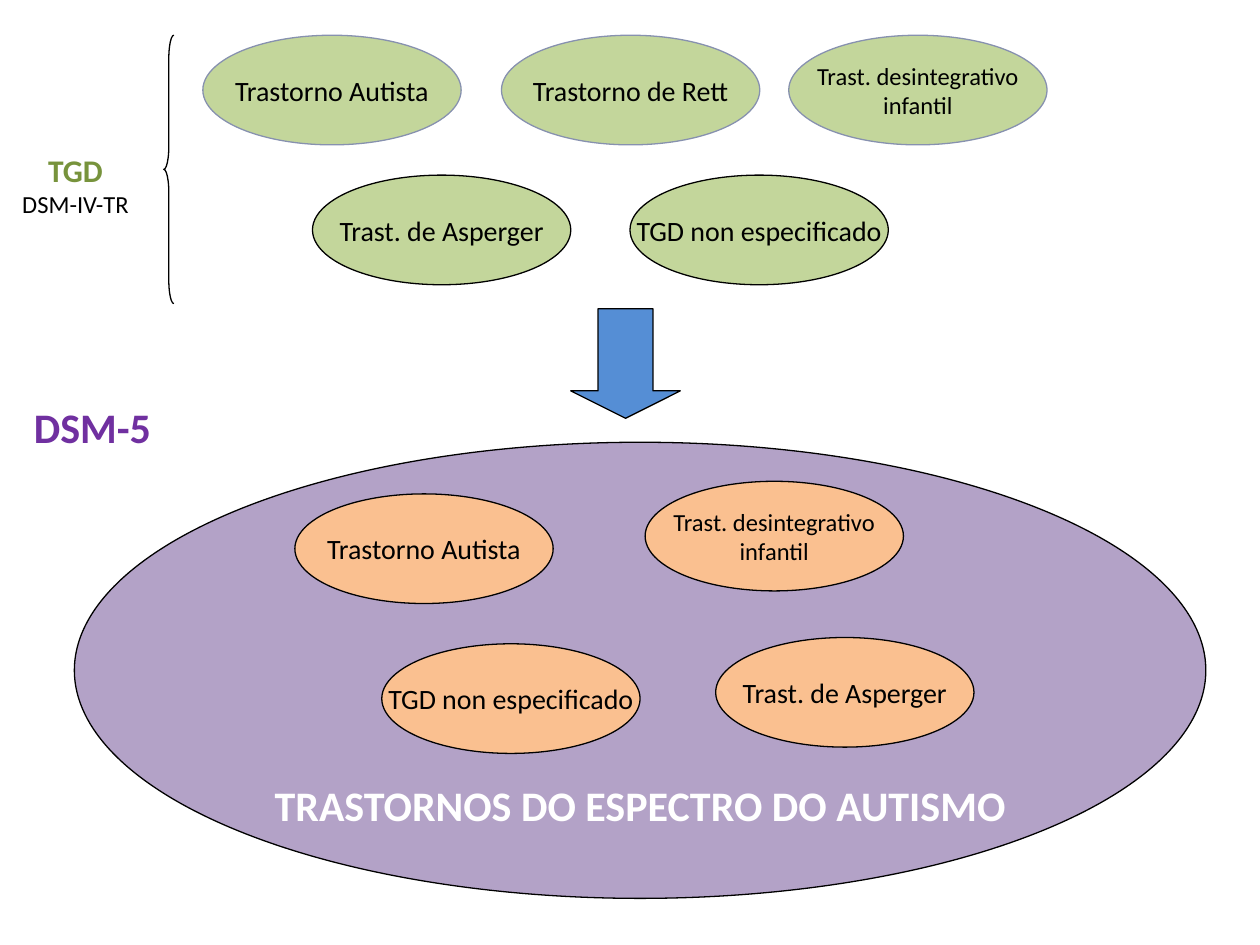
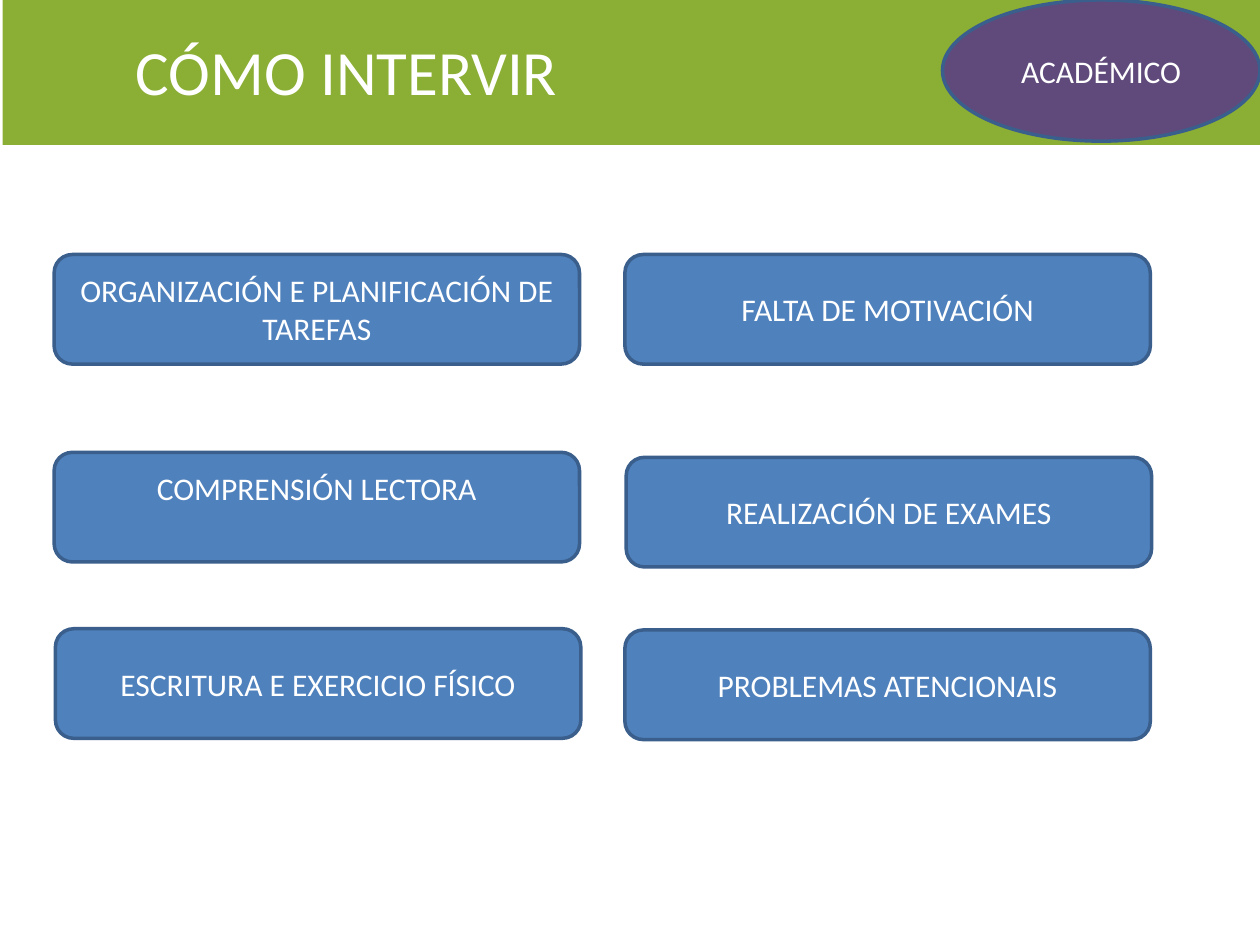
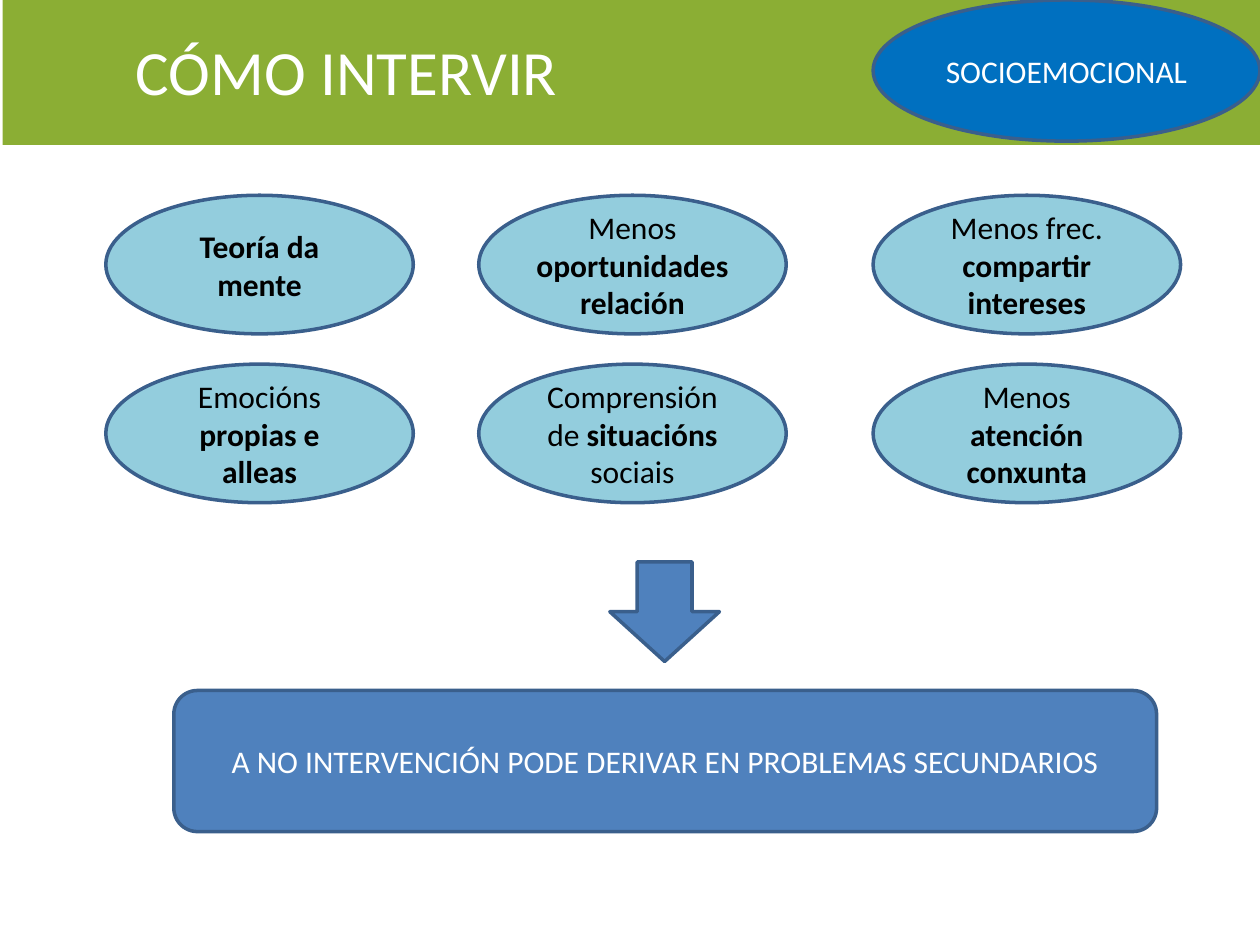
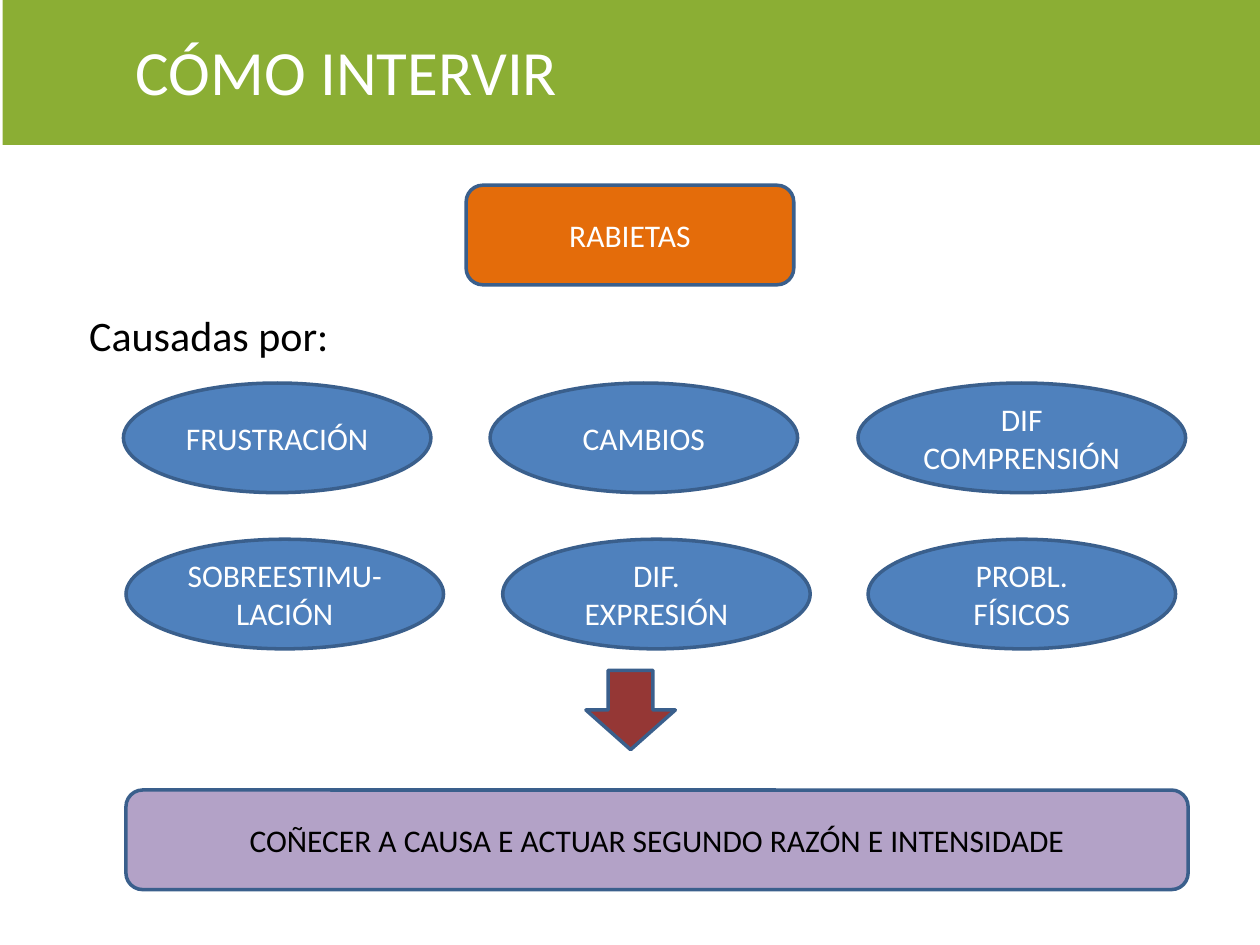
"""Builds four slides on autism disorders and how to intervene."""
from dataclasses import dataclass

from pptx import Presentation
from pptx import util as u
from pptx.dml import color as dml
from pptx.enum import shapes, text

CELL = u.Inches(0.1)
COLUMNS, ROWS = 100, 75
KIND = shapes.MSO_SHAPE
ALIGN = text.PP_ALIGN
ANCHOR = text.MSO_ANCHOR


@dataclass(frozen=True)
class Theme:
    """Colours, type sizes and line widths shared by the slides."""
    font: str = "Calibri"
    black: str = "000000"
    white: str = "FFFFFF"
    band: str = "8BAE34"
    blue: str = "4F81BD"
    outline: str = "3A5F8C"
    bright_blue: str = "0070C0"
    arrow_blue: str = "558ED5"
    pale_blue: str = "93CDDD"
    pale_green: str = "C3D69B"
    green: str = "77933C"
    grey_blue: str = "8791AF"
    peach: str = "FAC090"
    orange: str = "E46C0A"
    lilac: str = "B3A2C7"
    purple: str = "604A7B"
    violet: str = "7030A0"
    red: str = "953735"
    title: int = 36
    heading: int = 24
    body: int = 18
    label: int = 16
    small: int = 14
    thin: float = 0.75
    thick: float = 2


THEME = Theme()


@dataclass(frozen=True)
class Box:
    """A region in grid columns and rows."""
    left: float
    top: float
    width: float
    height: float

    def inner(self, left, top, width, height):
        """Return a box placed relative to this one."""
        return Box(self.left + left, self.top + top, width, height)

    def lengths(self):
        """Return the region in slide units."""
        return [round(cells * CELL) for cells in (self.left, self.top, self.width, self.height)]


PAGE = Box(0, 0, COLUMNS, ROWS)


def rgb(value):
    """Turn a hex string into a colour."""
    return dml.RGBColor.from_string(value)


def write(shape, words, size=THEME.body, color=THEME.white, bold=False,
          align=ALIGN.CENTER, wrap=True):
    """Add a paragraph per line of words, with *starred* pieces in bold."""
    frame = shape.text_frame
    frame.word_wrap = wrap
    for line in words.split("\n"):
        paragraph = frame.paragraphs[0] if not frame.text else frame.add_paragraph()
        paragraph.alignment = align
        for index, piece in enumerate(line.split("*")):
            if piece:
                run = paragraph.add_run()
                run.text = piece
                run.font.name = THEME.font
                run.font.size = u.Pt(size)
                run.font.color.rgb = rgb(color)
                run.font.bold = bold or index % 2 == 1


def draw(slide, kind, box, fill=THEME.blue, line=THEME.outline, weight=THEME.thick,
         words="", adjust=(), **style):
    """Add a preset shape with its fill, outline and words."""
    shape = slide.shapes.add_shape(kind, *box.lengths())
    shape.shadow.inherit = False
    if fill:
        shape.fill.solid()
        shape.fill.fore_color.rgb = rgb(fill)
    else:
        shape.fill.background()
    if line:
        shape.line.color.rgb = rgb(line)
        shape.line.width = u.Pt(weight)
    else:
        shape.line.fill.background()
    for index, value in enumerate(adjust):
        shape.adjustments[index] = value
    shape.text_frame.vertical_anchor = ANCHOR.MIDDLE
    if words:
        write(shape, words, **style)
    return shape


def label(slide, box, words, grow=True, **style):
    """Add a plain text box."""
    shape = slide.shapes.add_textbox(*box.lengths())
    write(shape, words, **style)
    if grow:
        shape.text_frame.auto_size = text.MSO_AUTO_SIZE.SHAPE_TO_FIT_TEXT
    return shape


def header(slide, box, badge="", badge_width=0, badge_fill=None):
    """Place the green band, its title and an optional badge at the right."""
    draw(slide, KIND.RECTANGLE, box, fill=THEME.band, line=None)
    label(slide, box.inner(9.6, 2.1, 82.7, 7.1), "CÓMO INTERVIR", size=THEME.title, align=ALIGN.LEFT)
    if badge:
        draw(slide, KIND.OVAL, box.inner(box.width - badge_width, 0, badge_width, 11.2),
             fill=badge_fill, words=badge)


def disorders(slide, box, items, fill):
    """Place the small ovals that each name a disorder."""
    for left, top, words, line in items:
        size = THEME.small if "\n" in words else THEME.label
        draw(slide, KIND.OVAL, box.inner(left, top, 20.5, 8.7), fill=fill, line=line,
             weight=THEME.thin, words=words, size=size, color=THEME.black, wrap=False)


def old_manual(slide, box):
    """Place the five former disorders with their brace and label."""
    disorders(slide, box, [
        (16.1, 0, "Trastorno Autista", THEME.grey_blue),
        (39.8, 0, "Trastorno de Rett", THEME.grey_blue),
        (62.6, 0, "Trast. desintegrativo\ninfantil", THEME.grey_blue),
        (24.8, 11.1, "Trast. de Asperger", THEME.black),
        (50, 11.1, "TGD non especificado", THEME.black),
    ], THEME.pale_green)
    draw(slide, KIND.LEFT_BRACE, box.inner(13, 0, 0.8, box.height), fill=None,
         line=THEME.black, weight=THEME.thin, adjust=(2.27, 0.5))
    name = label(slide, box.inner(0.7, 8.7, 10.6, 6.4), "TGD", color=THEME.green, bold=True, wrap=False)
    write(name, "DSM-IV-TR", size=THEME.small, color=THEME.black, wrap=False)


def new_manual(slide, box):
    """Place the spectrum oval with the disorders it takes in."""
    spectrum = draw(slide, KIND.OVAL, box, fill=THEME.lilac, line=THEME.black, weight=THEME.thin,
                    words="TRASTORNOS DO ESPECTRO DO AUTISMO", size=THEME.heading,
                    bold=True, wrap=False)
    spectrum.text_frame.vertical_anchor = ANCHOR.BOTTOM
    spectrum.text_frame.margin_bottom = u.Inches(0.01)
    disorders(slide, box, [
        (17.5, 4.1, "Trastorno Autista", THEME.black),
        (45.3, 3.1, "Trast. desintegrativo\ninfantil", THEME.black),
        (50.9, 15.5, "Trast. de Asperger", THEME.black),
        (24.4, 16, "TGD non especificado", THEME.black),
    ], THEME.peach)
    label(slide, box.inner(-4.2, -3.7, 11.4, 5), "DSM-5", size=THEME.heading,
          color=THEME.violet, bold=True, align=ALIGN.LEFT, wrap=False)


def cards(slide, box, items):
    """Stack rounded cards of one size at the given rows of a column."""
    return [draw(slide, KIND.ROUNDED_RECTANGLE, box.inner(left, top, box.width, 8.7), words=words)
            for left, top, words in items]


def oval_row(slide, box, items, **style):
    """Place a row of ovals at the given columns and widths."""
    for left, width, words in items:
        draw(slide, KIND.OVAL, box.inner(left, 0, width, box.height), words=words, **style)


def manuals_slide(slide):
    """Compare the disorders of both manuals."""
    new_manual(slide, PAGE.inner(5.9, 35.1, 89.8, 36.2))
    old_manual(slide, PAGE.inner(0, 2.8, COLUMNS, 21.3))
    draw(slide, KIND.DOWN_ARROW, PAGE.inner(45.3, 24.5, 8.7, 8.7), fill=THEME.arrow_blue,
         line=THEME.black, weight=THEME.thin, adjust=(0.5, 0.25))


def academic_slide(slide, band):
    """List the academic areas in two columns."""
    left_cards = cards(slide, PAGE.inner(4.3, 20.2, 41.7, 38.4), [
        (0, 0, "ORGANIZACIÓN E PLANIFICACIÓN DE TAREFAS"),
        (0, 15.7, "COMPRENSIÓN LECTORA"),
        (0.1, 29.7, "ESCRITURA E EXERCICIO FÍSICO"),
    ])
    left_cards[1].text_frame.margin_bottom = u.Inches(0.35)
    cards(slide, PAGE.inner(49.6, 20.2, 41.7, 38.5), [
        (0, 0, "FALTA DE MOTIVACIÓN"),
        (0.1, 16.1, "REALIZACIÓN DE EXAMES"),
        (0, 29.8, "PROBLEMAS ATENCIONAIS"),
    ])
    header(slide, band, "ACADÉMICO", 25.2, THEME.purple)


def social_slide(slide, band):
    """Show the social difficulties and what follows from them."""
    columns, width = (8.4, 38, 69.3), 24.4
    rows = [
        (15.5, ("*Teoría da mente*", "Menos *oportunidades relación*",
                "Menos frec. *compartir intereses*")),
        (28.9, ("Emocións *propias e alleas*", "Comprensión de *situacións* sociais",
                "Menos *atención conxunta*")),
    ]
    for top, names in rows:
        oval_row(slide, PAGE.inner(0, top, COLUMNS, 11),
                 [(left, width, words) for left, words in zip(columns, names)],
                 fill=THEME.pale_blue, color=THEME.black)
    header(slide, band, "SOCIOEMOCIONAL", 30.7, THEME.bright_blue)
    draw(slide, KIND.DOWN_ARROW, PAGE.inner(48.4, 44.6, 8.7, 7.9))
    draw(slide, KIND.ROUNDED_RECTANGLE, PAGE.inner(13.8, 54.8, 78, 11.2),
         words="A NO INTERVENCIÓN PODE DERIVAR EN PROBLEMAS SECUNDARIOS")


def tantrums_slide(slide, band):
    """Show the causes of tantrums and the response."""
    label(slide, PAGE.inner(6.1, 24.1, 90, 42.9), "Causadas por:", grow=False,
          size=THEME.heading, color=THEME.black, align=ALIGN.LEFT)
    draw(slide, KIND.ROUNDED_RECTANGLE, PAGE.inner(37, 14.7, 26, 7.9), fill=THEME.orange,
         words="RABIETAS")
    oval_row(slide, PAGE.inner(0, 30.4, COLUMNS, 8.7), [
        (9.8, 24.4, "FRUSTRACIÓN"), (38.9, 24.4, "CAMBIOS"), (68.1, 26, "DIF COMPRENSIÓN")])
    oval_row(slide, PAGE.inner(0, 42.8, COLUMNS, 8.7), [
        (10, 25.2, "SOBREESTIMU-LACIÓN"), (39.9, 24.4, "DIF. EXPRESIÓN"),
        (68.9, 24.4, "PROBL. FÍSICOS")])
    draw(slide, KIND.DOWN_ARROW, PAGE.inner(46.5, 53.2, 7.1, 6.3), fill=THEME.red)
    draw(slide, KIND.ROUNDED_RECTANGLE, PAGE.inner(10, 62.7, 84.3, 7.9), fill=THEME.lilac,
         words="COÑECER A CAUSA E ACTUAR SEGUNDO RAZÓN E INTENSIDADE", color=THEME.black)
    header(slide, band)


def main():
    """Build and save the presentation."""
    presentation = Presentation()
    presentation.slide_width = COLUMNS * CELL
    presentation.slide_height = ROWS * CELL
    blank = presentation.slide_layouts[6]
    band = PAGE.inner(0.2, 0, 99.8, 11.5)
    manuals_slide(presentation.slides.add_slide(blank))
    for build in (academic_slide, social_slide, tantrums_slide):
        build(presentation.slides.add_slide(blank), band)
    presentation.save("out.pptx")


if __name__ == "__main__":
    main()
